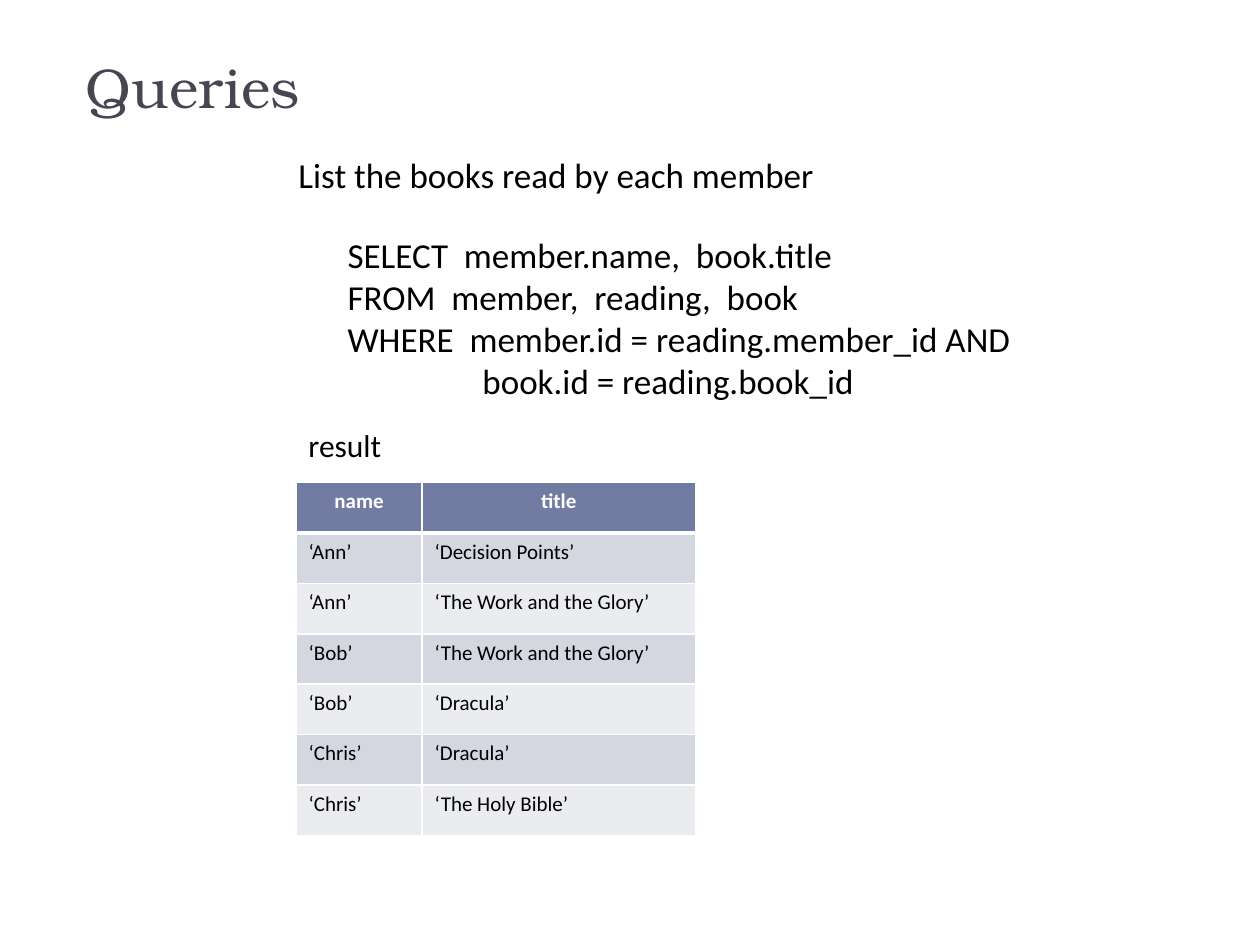
from lxml import etree
from pptx import Presentation
from pptx.dml.color import RGBColor
from pptx.enum import text
from pptx.oxml import ns
from pptx.util import Inches, Pt

BODY_FONT, TITLE_FONT = "Calibri", "TeX Gyre Bonum"
BLACK, WHITE, SLATE = "000000", "FFFFFF", "464653"
HEADER_FILL, BAND_FILLS = "727CA3", ("D5D7E0", "EBECF0")

QUERY = [
    ("SELECT  member.name,  book.title", 0),
    ("FROM  member,  reading,  book", 0),
    ("WHERE  member.id = reading.member_id AND", 0),
    ("book.id = reading.book_id", 1.07),
]
TEXTS = [
    ([("result", 0)], (2.35, 3.33, 0.84, 0.4), 18, BODY_FONT, BLACK, "TOP"),
    ([("Queries", 0)], (0.58, -0.25, 9, 1.25), 32, TITLE_FONT, SLATE, "BOTTOM"),
    (QUERY, (2.66, 1.8, 5.75, 1.45), 20, BODY_FONT, BLACK, "TOP"),
    ([("List the books read by each member", 0)], (2.27, 1.17, 4.68, 0.44),
     20, BODY_FONT, BLACK, "TOP"),
]
RESULT = [
    ("name", "title"),
    ("‘Ann’", "‘Decision Points’"),
    ("‘Ann’", "‘The Work and the Glory’"),
    ("‘Bob’", "‘The Work and the Glory’"),
    ("‘Bob’", "‘Dracula’"),
    ("‘Chris’", "‘Dracula’"),
    ("‘Chris’", "‘The Holy Bible’"),
]
COLUMN_WIDTHS = (1, 2.17)
ROW_HEIGHT = 0.4


def rgb(value):
    return RGBColor.from_string(value)


def set_font(para, size, name, color, bold=False):
    font = para.font
    font.size, font.name, font.bold = Pt(size), name, bold
    font.color.rgb = rgb(color)


def add_text(page, lines, place, size, name, color, anchor):
    box = page.shapes.add_textbox(*map(Inches, place))
    frame = box.text_frame
    frame.word_wrap = True
    frame.vertical_anchor = text.MSO_ANCHOR[anchor]
    for index, (line, indent) in enumerate(lines):
        para = frame.add_paragraph() if index else frame.paragraphs[0]
        para.text = line
        set_font(para, size, name, color)
        if indent:
            para._p.get_or_add_pPr().set("marL", str(Inches(indent)))


def set_borders(cell, widths):
    props = cell._tc.get_or_add_tcPr()
    for index, (side, width) in enumerate(widths.items()):
        line = etree.Element(ns.qn(f"a:ln{side}"), w=str(Pt(width)))
        fill = etree.SubElement(line, ns.qn("a:solidFill"))
        etree.SubElement(fill, ns.qn("a:srgbClr"), val=WHITE)
        props.insert(index, line)


def add_result(page, left, top):
    frame = page.shapes.add_table(
        len(RESULT), len(COLUMN_WIDTHS), Inches(left), Inches(top),
        Inches(sum(COLUMN_WIDTHS)), Inches(ROW_HEIGHT * len(RESULT)))
    table = frame.table
    for column, width in zip(table.columns, COLUMN_WIDTHS):
        column.width = Inches(width)
    for r, values in enumerate(RESULT):
        table.rows[r].height = Inches(ROW_HEIGHT)
        header = r == 0
        for c, value in enumerate(values):
            cell = table.cell(r, c)
            cell.text = value
            para = cell.text_frame.paragraphs[0]
            set_font(para, 12, BODY_FONT, WHITE if header else BLACK, header)
            if header:
                para.alignment = text.PP_ALIGN.CENTER
            cell.fill.solid()
            cell.fill.fore_color.rgb = rgb(
                HEADER_FILL if header else BAND_FILLS[(r - 1) % 2])
            set_borders(cell, {"L": 1, "R": 1, "T": 3 if r == 1 else 1,
                               "B": 3 if header else 1})


def main():
    deck = Presentation()
    deck.slide_width, deck.slide_height = Inches(10), Inches(7.5)
    page = deck.slides.add_slide(deck.slide_layouts[6])
    add_result(page, 2.35, 3.83)
    for item in TEXTS:
        add_text(page, *item)
    deck.save("out.pptx")


if __name__ == "__main__":
    main()
